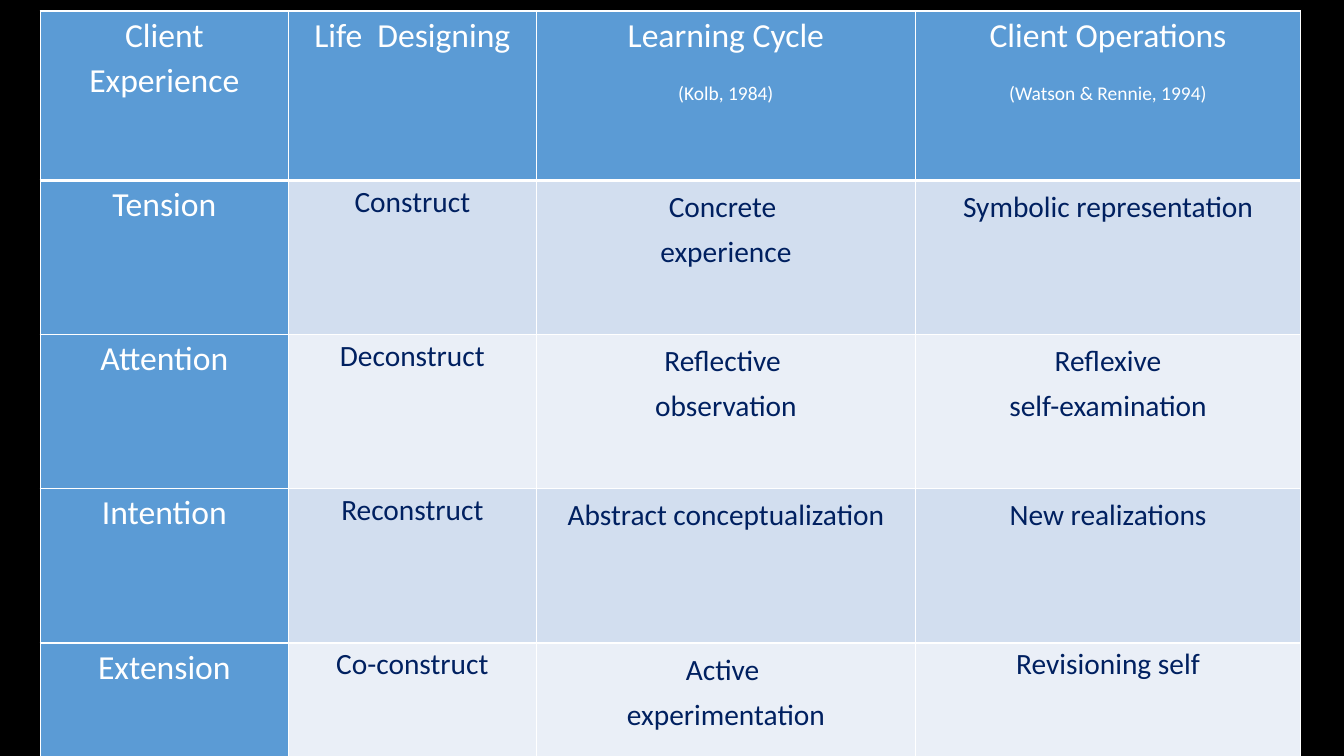
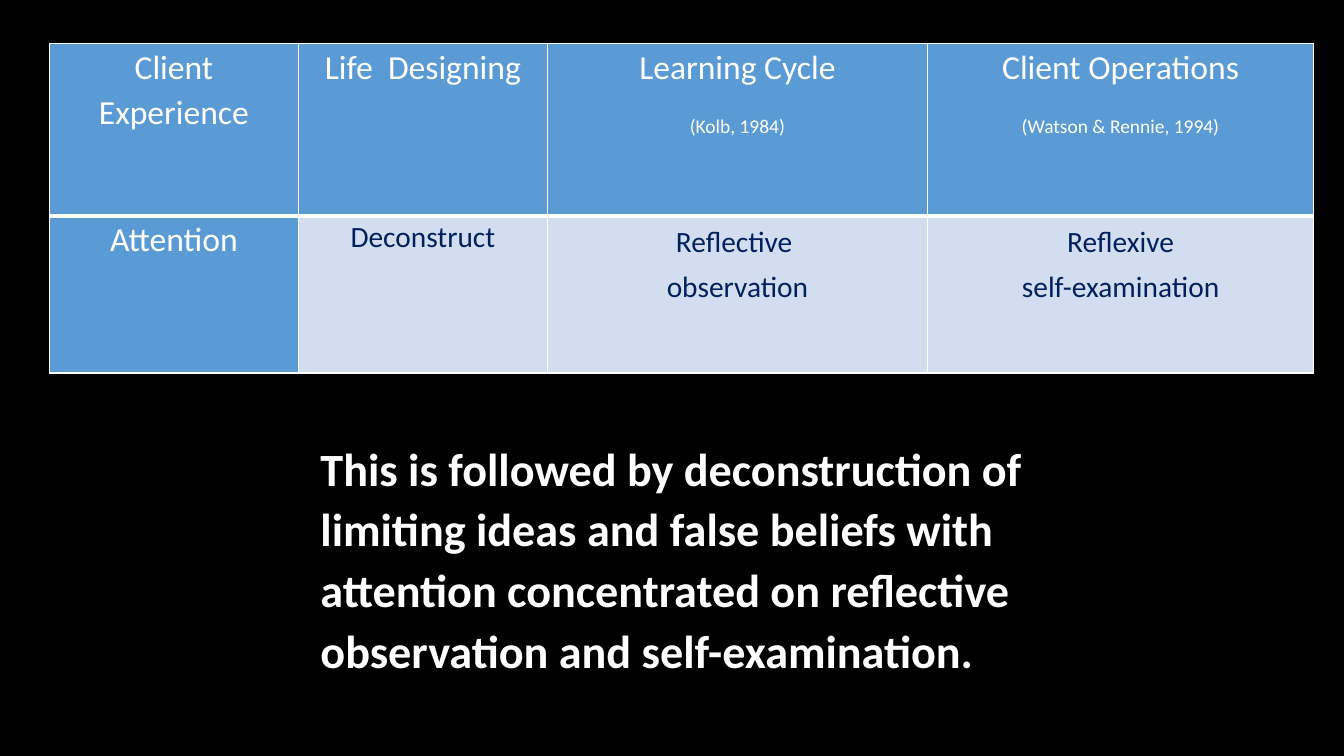
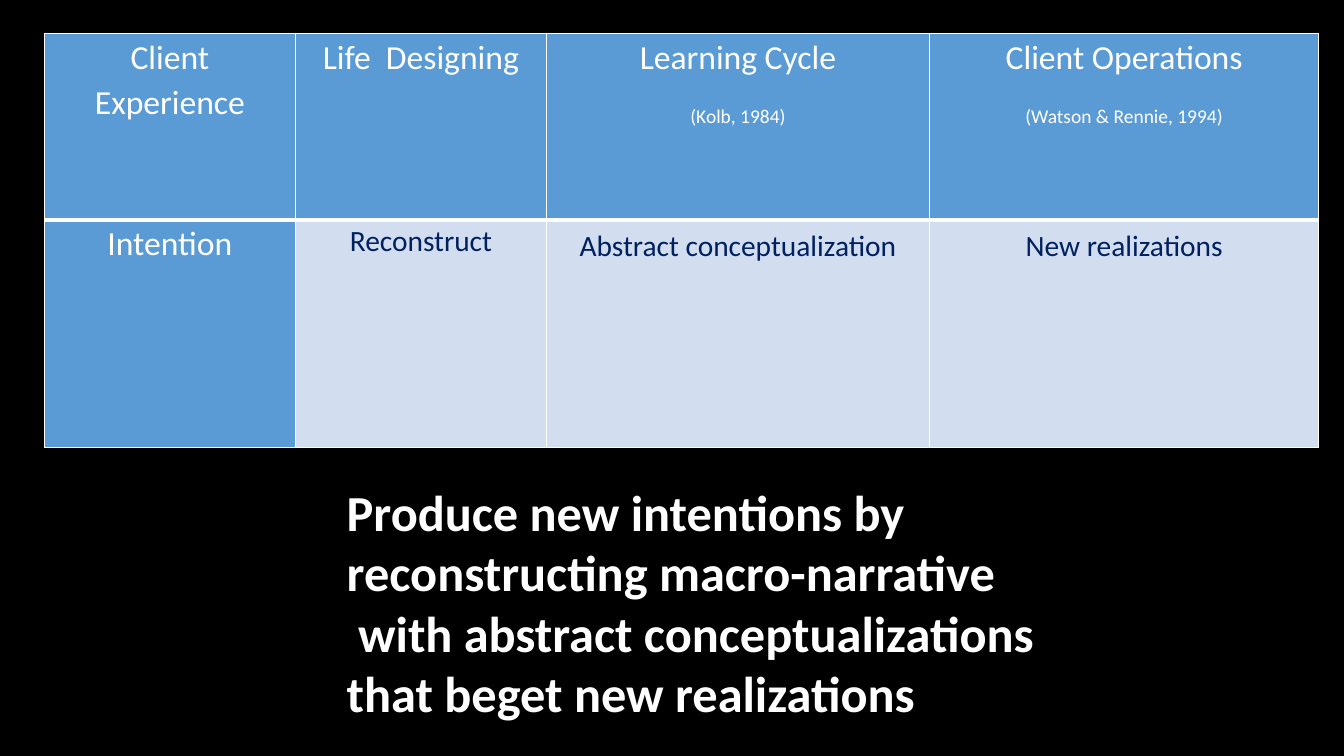
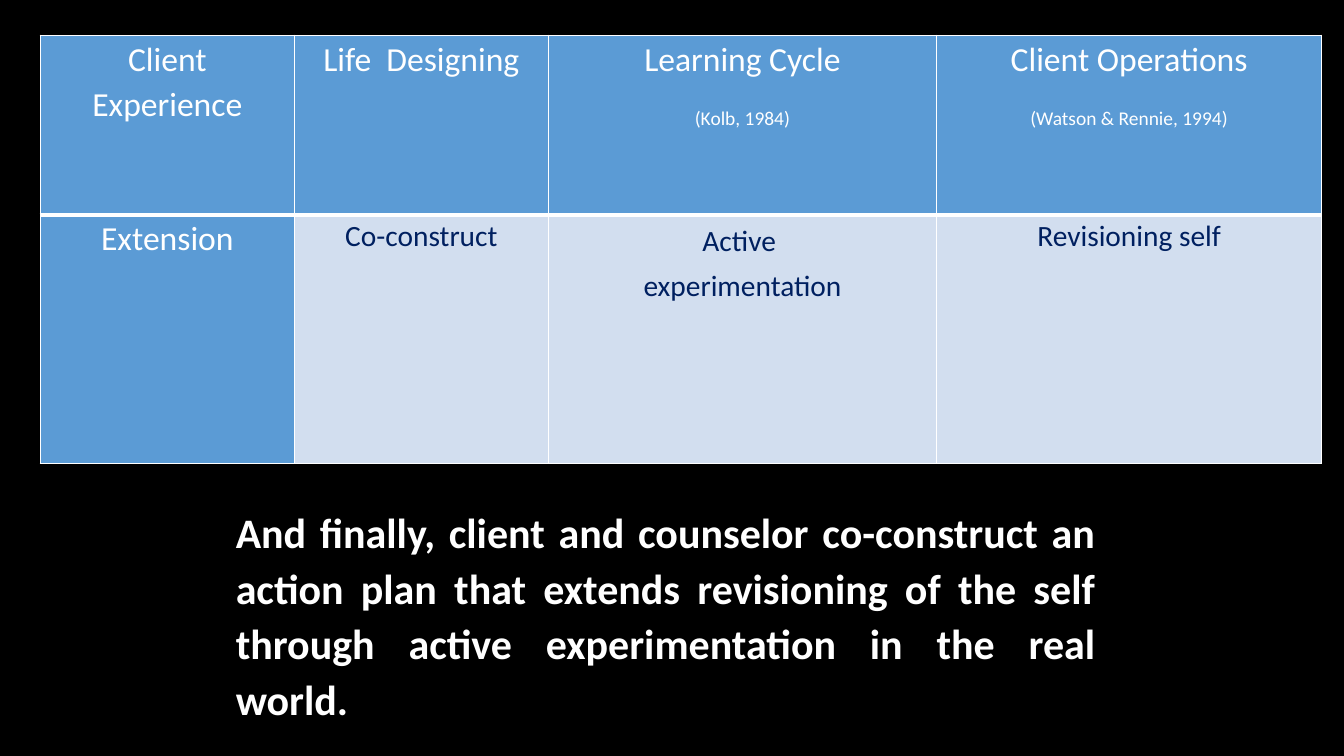
"""Build four slides on client experience, life designing and learning."""
import dataclasses

import lxml.etree
import pptx
import pptx.dml.color
import pptx.enum.text
import pptx.oxml.ns
import pptx.util

Inches = pptx.util.Inches
Pt = pptx.util.Pt
Align = pptx.enum.text.PP_ALIGN


@dataclasses.dataclass(frozen=True)
class Theme:
    font: str = "Calibri"
    background: str = "000000"
    light: str = "FFFFFF"
    navy: str = "002060"
    heading_fill: str = "5B9BD5"
    band_fills: tuple = ("D2DEEF", "EAEFF7")
    heading_size: int = 24
    body_size: int = 21
    tight: float = 1.1
    loose: float = 1.25
    thin_line: int = 1
    thick_line: int = 3
    cell_margin: float = 0.04


HEADINGS = (
    ("Client", "Experience"),
    ("Life  Designing",),
    ("Learning Cycle", "(Kolb, 1984)"),
    ("Client Operations", "(Watson & Rennie, 1994)"),
)
TENSION = (("Tension",), ("Construct",), ("Concrete ", "experience"), ("Symbolic representation",))
ATTENTION = (("Attention",), ("Deconstruct",), ("Reflective ", "observation"), ("Reflexive", "self-examination"))
INTENTION = (("Intention",), ("Reconstruct",), ("Abstract conceptualization",), ("New realizations",))
EXTENSION = (("Extension",), ("Co-construct",), ("Active ", "experimentation"), ("Revisioning self",))
TIGHT_CELLS = {"Construct", "Deconstruct", "Reconstruct", "Co-construct", "Revisioning self"}


class Deck:
    def __init__(self, theme):
        self.theme = theme
        self.presentation = pptx.Presentation()
        self.presentation.slide_width = Inches(13.33)
        self.presentation.slide_height = Inches(7.5)
        self.slide = None

    def color(self, value):
        return pptx.dml.color.RGBColor.from_string(value)

    def add_slide(self):
        self.slide = self.presentation.slides.add_slide(self.presentation.slide_layouts[6])
        fill = self.slide.background.fill
        fill.solid()
        fill.fore_color.rgb = self.color(self.theme.background)

    def add_run(self, paragraph, text, size, color, bold=False):
        run = paragraph.add_run()
        run.text = text
        run.font.name = self.theme.font
        run.font.size = Pt(size)
        run.font.bold = bold
        run.font.color.rgb = self.color(color)
        return run

    def paragraphs(self, frame, count):
        return [frame.paragraphs[0]] + [frame.add_paragraph() for _ in range(count - 1)]

    def add_borders(self, cell, bottom):
        properties = cell._tc.get_or_add_tcPr()
        thin = self.theme.thin_line
        for side, width in (("L", thin), ("R", thin), ("T", thin), ("B", bottom)):
            line = lxml.etree.SubElement(properties, pptx.oxml.ns.qn(f"a:ln{side}"), w=str(Pt(width)))
            fill = lxml.etree.SubElement(line, pptx.oxml.ns.qn("a:solidFill"))
            lxml.etree.SubElement(fill, pptx.oxml.ns.qn("a:srgbClr"), val=self.theme.light)

    def fill_cell(self, cell, lines, row, column):
        theme = self.theme
        is_heading = row == 0 or column == 0
        self.add_borders(cell, theme.thick_line if row == 0 else theme.thin_line)
        cell.fill.solid()
        cell.fill.fore_color.rgb = self.color(
            theme.heading_fill if is_heading else theme.band_fills[(row - 1) % 2])
        cell.margin_left = cell.margin_right = Inches(theme.cell_margin)
        cell.margin_top = cell.margin_bottom = 0
        size, color = (theme.heading_size, theme.light) if is_heading else (theme.body_size, theme.navy)
        tight = is_heading or lines[0] in TIGHT_CELLS
        for paragraph, text in zip(self.paragraphs(cell.text_frame, len(lines)), lines):
            paragraph.alignment = Align.CENTER
            paragraph.line_spacing = theme.tight if tight else theme.loose
            run = self.add_run(paragraph, text, size, color)
            if text.startswith("("):
                run._r.get_or_add_rPr().set("baseline", "-25000")

    def add_table(self, left, top, widths, heights, stages):
        rows = (HEADINGS, *stages)
        shape = self.slide.shapes.add_table(
            len(rows), len(widths), Inches(left), Inches(top), Inches(sum(widths)), Inches(sum(heights)))
        table = shape.table
        table.first_row = table.horz_banding = False
        for column, width in zip(table.columns, widths):
            column.width = Inches(width)
        for row, height in zip(table.rows, heights):
            row.height = Inches(height)
        for row, cells in enumerate(rows):
            for column, lines in enumerate(cells):
                self.fill_cell(table.cell(row, column), lines, row, column)

    def add_statement(self, box, size, paragraphs, indent=0, spacing=None, before=0, align=Align.LEFT):
        shape = self.slide.shapes.add_textbox(*map(Inches, box))
        frame = shape.text_frame
        frame.word_wrap = True
        frame.auto_size = pptx.enum.text.MSO_AUTO_SIZE.SHAPE_TO_FIT_TEXT
        for paragraph, lines in zip(self.paragraphs(frame, len(paragraphs)), paragraphs):
            paragraph.alignment = align
            paragraph.line_spacing = spacing
            paragraph.space_before = Pt(before)
            paragraph._p.get_or_add_pPr().set("marL", str(Inches(indent)))
            for index, text in enumerate(lines):
                if index:
                    paragraph.add_line_break()
                self.add_run(paragraph, text, size, self.theme.light, bold=True)

    def save(self):
        self.presentation.save("out.pptx")


def main():
    theme = Theme()
    deck = Deck(theme)
    indented = {"indent": 0.56, "spacing": theme.tight, "before": 3}

    deck.add_slide()
    deck.add_table(0.4, 0.11, (2.46, 2.46, 3.76, 3.82), (1.68, 1.53, 1.53, 1.53, 2.32),
                   (TENSION, ATTENTION, INTENTION, EXTENSION))

    deck.add_slide()
    deck.add_statement((2.52, 4.26, 8.08, 2.54), 33, [[
        "This is followed by deconstruction of limiting ideas and false beliefs with "
        "attention concentrated on reflective observation and self-examination."]], **indented)
    deck.add_table(0.49, 0.43, (2.47, 2.47, 3.77, 3.83), (1.71, 1.56), (ATTENTION,))

    deck.add_slide()
    deck.add_table(0.44, 0.33, (2.49, 2.49, 3.8, 3.86), (1.85, 2.26), (INTENTION,))
    deck.add_statement((3.34, 4.72, 9.01, 2.52), 36, [
        ["Produce new intentions by", "reconstructing macro-narrative", " with abstract conceptualizations"],
        ["that beget new realizations"]])

    deck.add_slide()
    deck.add_table(0.4, 0.35, (2.52, 2.52, 3.85, 3.82), (1.78, 2.47), (EXTENSION,))
    deck.add_statement((1.68, 4.93, 9.29, 1.77), 30, [[
        "And finally, client and counselor co-construct an action plan that extends "
        "revisioning of the self through active experimentation in the real world."]],
        align=Align.JUSTIFY, **indented)

    deck.save()


if __name__ == "__main__":
    main()
